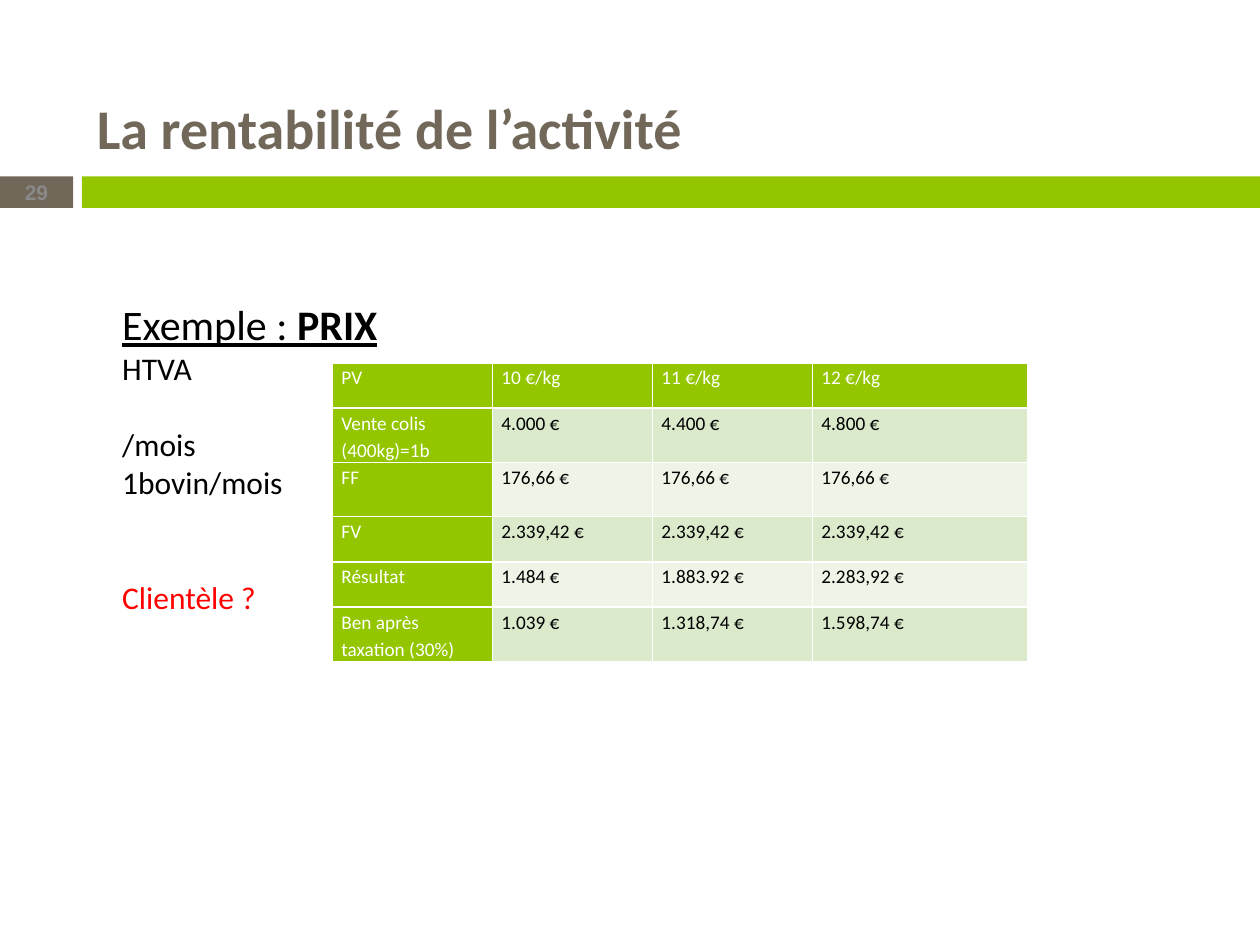
import pptx
import pptx.dml.color
import pptx.enum.shapes
import pptx.enum.text
import pptx.util
from dataclasses import dataclass

Inches, Pt = pptx.util.Inches, pptx.util.Pt
ANCHOR = pptx.enum.text.MSO_ANCHOR
ALIGN = pptx.enum.text.PP_ALIGN


@dataclass(frozen=True)
class Theme:
    font: str = "Calibri"
    number_font: str = "Arial"
    brown: str = "71685A"
    green: str = "94C600"
    bands: tuple = ("EEF5E7", "DCEACC")
    black: str = "000000"
    white: str = "FFFFFF"
    red: str = "FF0000"
    grey: str = "898989"
    title: int = 32
    heading: int = 24
    body: int = 18
    number: int = 12
    cell: int = 11


T = Theme()
BODY_LINE = 22  # height of one body line, in points

PRICES = [
    ("PV", "10 €/kg", "11 €/kg", "12 €/kg"),
    ("Vente colis\n(400kg)=1b", "4.000 €", "4.400 €", "4.800 €"),
    ("FF", "176,66 €", "176,66 €", "176,66 €"),
    ("FV", "2.339,42 €", "2.339,42 €", "2.339,42 €"),
    ("Résultat", "1.484 €", "1.883.92 €", "2.283,92 €"),
    ("Ben après taxation (30%)", "1.039 €", "1.318,74 €", "1.598,74 €"),
]
COL_WIDTHS = (1.27, 1.27, 1.27, 1.71)
ROW_HEIGHTS = (0.36, 0.43, 0.43, 0.36, 0.36, 0.43)

# text, colour, lines left free above
NOTES = [
    ("HTVA", T.black, 0),
    ("/mois", T.black, 1),
    ("1bovin/mois", T.black, 0),
    ("Clientèle ?", T.red, 2),
]


def rgb(value):
    return pptx.dml.color.RGBColor.from_string(value)


def set_font(font, size, color, bold=False, name=T.font):
    font.name, font.size, font.bold = name, Pt(size), bold
    font.color.rgb = rgb(color)


def set_frame(tf, anchor=ANCHOR.TOP, insets=(0, 0, 0, 0)):
    tf.word_wrap = True
    tf.vertical_anchor = anchor
    tf.margin_left, tf.margin_top, tf.margin_right, tf.margin_bottom = map(Inches, insets)


def add_bar(s, box, color):
    sp = s.shapes.add_shape(pptx.enum.shapes.MSO_SHAPE.RECTANGLE, *map(Inches, box))
    sp.shadow.inherit = False
    sp.fill.solid()
    sp.fill.fore_color.rgb = rgb(color)
    sp.line.fill.background()
    return sp


def add_band(s, x, y, w, h):
    """Brown page number block, then the green rule."""
    number_w, rule_x = 0.58, 0.65
    tf = add_bar(s, (x, y, number_w, h), T.brown).text_frame
    set_frame(tf, ANCHOR.MIDDLE)
    p = tf.paragraphs[0]
    p.text, p.alignment = "29", ALIGN.CENTER
    set_font(p.font, T.number, T.grey, True, T.number_font)
    add_bar(s, (x + rule_x, y, w - rule_x, h), T.green)


def add_title(s, x, y, w, h):
    tf = s.shapes.add_textbox(*map(Inches, (x, y, w, h))).text_frame
    set_frame(tf, ANCHOR.BOTTOM, (0.1, 0.14, 0.1, 0.05))
    p = tf.paragraphs[0]
    p.text, p.line_spacing = "La rentabilité de l’activité", 0.9
    set_font(p.font, T.title, T.brown, True)


def add_notes(s, x, y, w, h):
    """Underlined heading with the remarks beside the table."""
    tf = s.shapes.add_textbox(*map(Inches, (x, y, w, h))).text_frame
    set_frame(tf)
    p = tf.paragraphs[0]
    for text, bold in (("Exemple : ", False), ("PRIX", True)):
        r = p.add_run()
        r.text = text
        set_font(r.font, T.heading, T.black, bold)
        r.font.underline = True
    for text, color, free in NOTES:
        p = tf.add_paragraph()
        p.text, p.space_before = text, Pt(free * BODY_LINE)
        set_font(p.font, T.body, color)


def add_prices(s, x, y, w, h):
    table = s.shapes.add_table(
        len(PRICES), len(COL_WIDTHS), *map(Inches, (x, y, w, h))).table
    for col, width in zip(table.columns, COL_WIDTHS):
        col.width = Inches(width)
    for row, height in zip(table.rows, ROW_HEIGHTS):
        row.height = Inches(height)
    for i, values in enumerate(PRICES):
        for j, text in enumerate(values):
            cell = table.cell(i, j)
            head = i == 0 or j == 0
            cell.fill.solid()
            cell.fill.fore_color.rgb = rgb(T.green if head else T.bands[i % 2])
            cell.margin_left = cell.margin_right = Inches(0.07)
            cell.margin_top = cell.margin_bottom = 0
            cell.text = text
            for p in cell.text_frame.paragraphs:
                p.line_spacing = 1.15
                set_font(p.font, T.cell, T.white if head else T.black)


def main():
    prs = pptx.Presentation()
    prs.slide_width, prs.slide_height = Inches(10), Inches(7.5)
    s = prs.slides.add_slide(prs.slide_layouts[6])
    add_band(s, 0, 1.4, 10, 0.25)
    add_title(s, 0.67, 0.25, 8.92, 1.08)
    add_notes(s, 0.97, 2.37, 8.52, 2.6)
    add_prices(s, 2.64, 2.88, sum(COL_WIDTHS), sum(ROW_HEIGHTS))
    prs.save("out.pptx")


if __name__ == "__main__":
    main()
